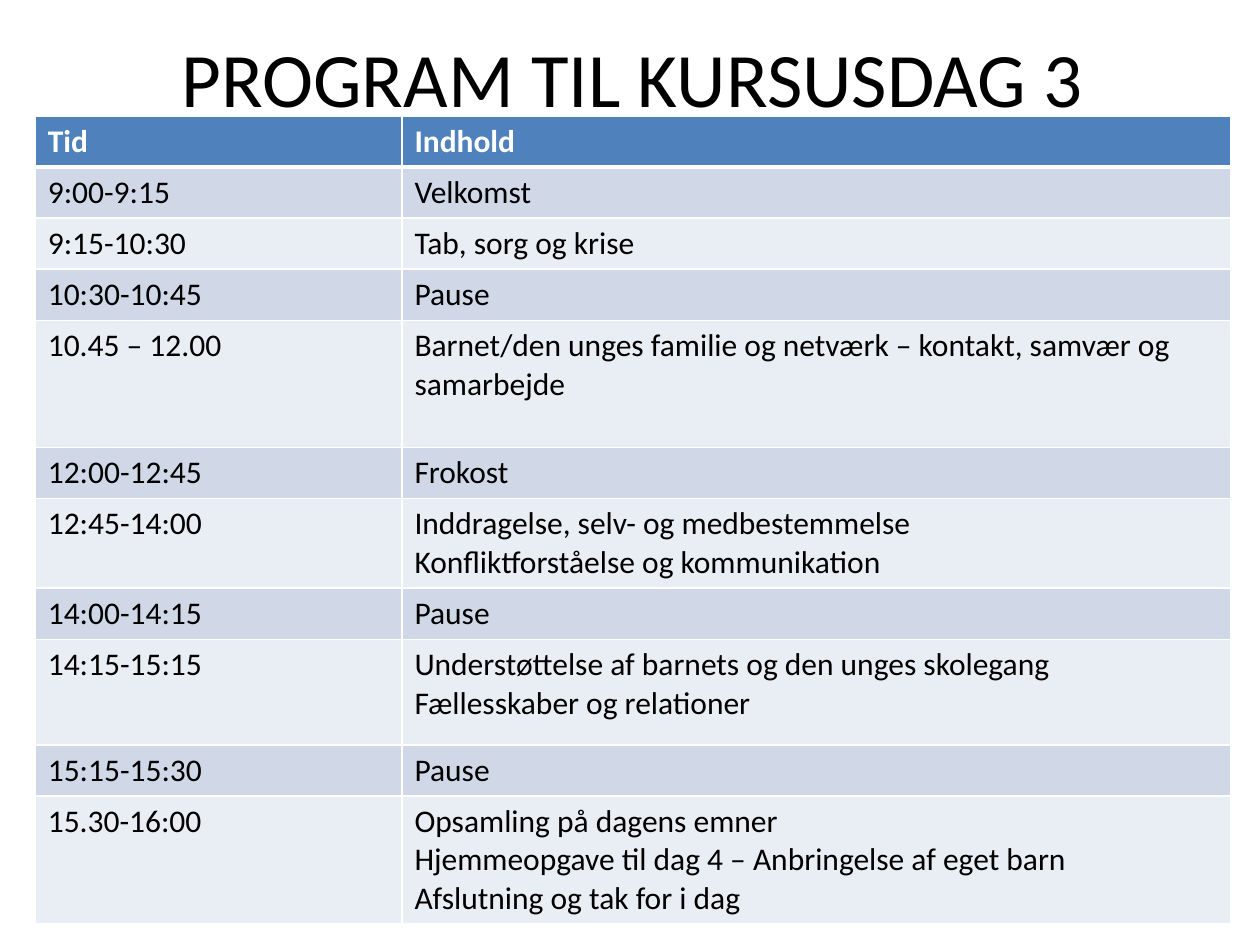
import dataclasses

import lxml.etree
import pptx
import pptx.dml.color
import pptx.enum.text
import pptx.oxml.ns
import pptx.util

Inches = pptx.util.Inches
Pt = pptx.util.Pt


@dataclasses.dataclass(frozen=True)
class Theme:
    font: str = "Calibri"
    title_size: int = 44
    table_size: int = 18
    ink: str = "000000"
    paper: str = "FFFFFF"
    header: str = "4F81BD"
    bands: tuple = ("D0D8E8", "E9EDF4")
    rule: float = 1
    header_rule: float = 3


class ProgramSlide:
    def __init__(self, presentation, theme):
        self.theme = theme
        self.slide = presentation.slides.add_slide(presentation.slide_layouts[5])

    def format_text(self, text_frame, size, color, bold=False):
        for paragraph in text_frame.paragraphs:
            for run in paragraph.runs:
                run.font.name = self.theme.font
                run.font.size = Pt(size)
                run.font.bold = bold
                run.font.color.rgb = pptx.dml.color.RGBColor.from_string(color)

    def title(self, text, left, top, width, height):
        heading = self.slide.shapes.title
        heading.left, heading.top = Inches(left), Inches(top)
        heading.width, heading.height = Inches(width), Inches(height)
        heading.text_frame.text = text
        heading.text_frame.vertical_anchor = pptx.enum.text.MSO_ANCHOR.MIDDLE
        heading.text_frame.paragraphs[0].alignment = pptx.enum.text.PP_ALIGN.CENTER
        self.format_text(heading.text_frame, self.theme.title_size, self.theme.ink)

    def border(self, cell, side, width):
        qn = pptx.oxml.ns.qn
        properties = cell._tc.get_or_add_tcPr()
        line = lxml.etree.SubElement(properties, qn(f"a:ln{side}"), w=str(Pt(width)))
        fill = lxml.etree.SubElement(line, qn("a:solidFill"))
        lxml.etree.SubElement(fill, qn("a:srgbClr"), val=self.theme.paper)

    def cell(self, cell, text, row):
        theme = self.theme
        is_header = row == 0
        cell.text_frame.text = text
        self.format_text(cell.text_frame, theme.table_size,
                         theme.paper if is_header else theme.ink, is_header)
        top = theme.header_rule if row == 1 else theme.rule
        bottom = theme.header_rule if is_header else theme.rule
        for side, width in zip("LRTB", (theme.rule, theme.rule, top, bottom)):
            self.border(cell, side, width)
        cell.fill.solid()
        color = theme.header if is_header else theme.bands[(row - 1) % 2]
        cell.fill.fore_color.rgb = pptx.dml.color.RGBColor.from_string(color)

    def table(self, entries, left, top, column_widths):
        height = sum(row_height for _, _, row_height in entries)
        schedule = self.slide.shapes.add_table(
            len(entries), len(column_widths), Inches(left), Inches(top),
            Inches(sum(column_widths)), Inches(height)).table
        for column, width in zip(schedule.columns, column_widths):
            column.width = Inches(width)
        for row, (time, content, row_height) in enumerate(entries):
            schedule.rows[row].height = Inches(row_height)
            for column, text in enumerate((time, content)):
                self.cell(schedule.cell(row, column), text, row)


SINGLE = 0.4
PROGRAM = [
    ("Tid", "Indhold", 0.4),
    ("9:00-9:15", "Velkomst", SINGLE),
    ("9:15-10:30", "Tab, sorg og krise", SINGLE),
    ("10:30-10:45", "Pause", SINGLE),
    ("10.45 – 12.00",
     "Barnet/den unges familie og netværk – kontakt, samvær og samarbejde", 1.01),
    ("12:00-12:45", "Frokost", SINGLE),
    ("12:45-14:00",
     "Inddragelse, selv- og medbestemmelse\vKonfliktforståelse og kommunikation", 0.7),
    ("14:00-14:15", "Pause", SINGLE),
    ("14:15-15:15",
     "Understøttelse af barnets og den unges skolegang\nFællesskaber og relationer", 0.84),
    ("15:15-15:30", "Pause", SINGLE),
    ("15.30-16:00",
     "Opsamling på dagens emner\nHjemmeopgave til dag 4 – Anbringelse af eget barn\n"
     "Afslutning og tak for i dag", 1),
]


def main():
    presentation = pptx.Presentation()
    presentation.slide_width, presentation.slide_height = Inches(10), Inches(7.5)
    program = ProgramSlide(presentation, Theme())
    program.title("PROGRAM TIL KURSUSDAG 3", 0.52, -0.02, 9, 1.25)
    program.table(PROGRAM, 0.28, 0.92, (2.91, 6.58))
    presentation.save("out.pptx")


if __name__ == "__main__":
    main()
